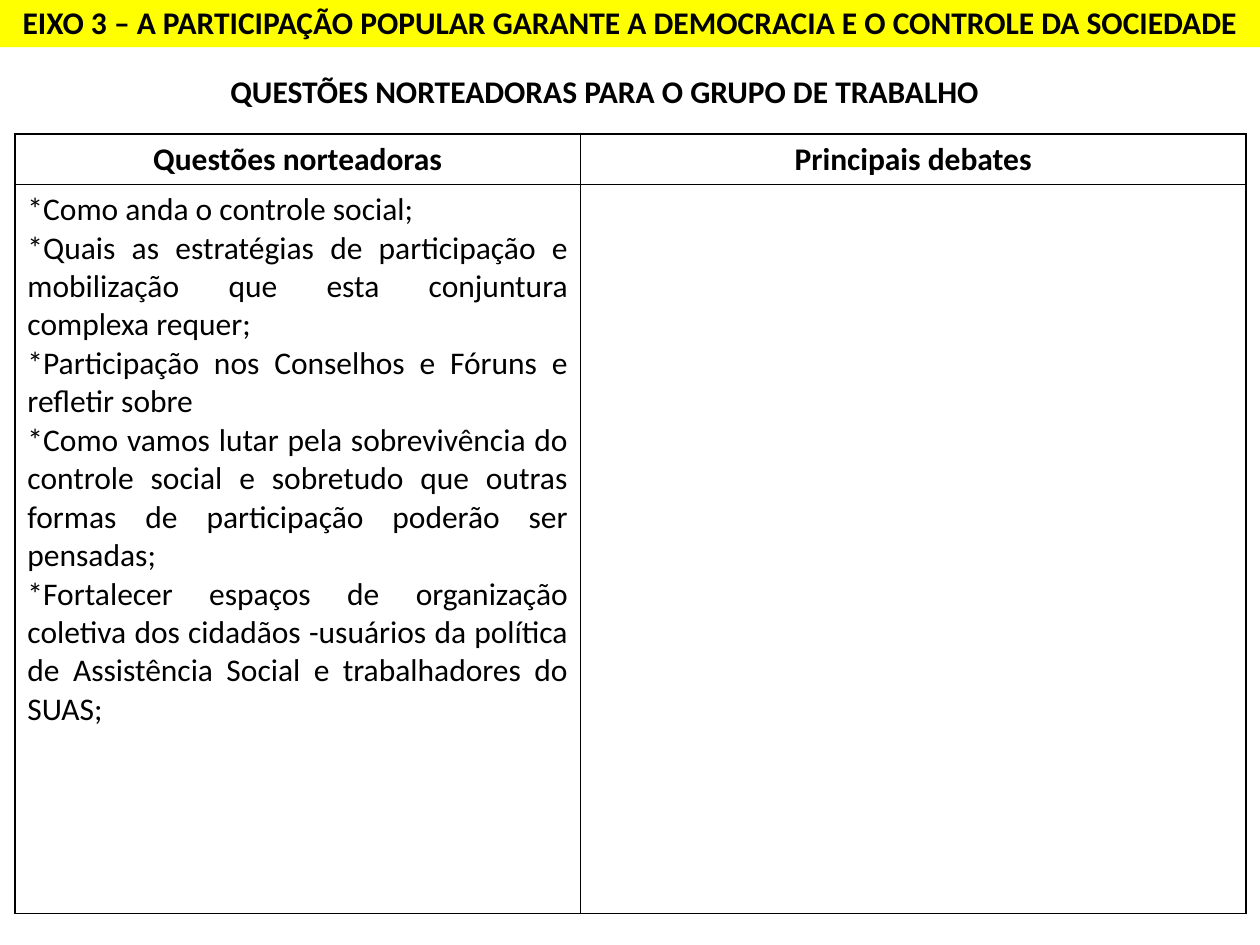
from dataclasses import dataclass

from lxml.etree import SubElement
from pptx import Presentation
from pptx.dml.color import RGBColor
from pptx.enum.text import MSO_ANCHOR, MSO_AUTO_SIZE, PP_ALIGN as ALIGN
from pptx.oxml.ns import qn
from pptx.util import Pt


@dataclass(frozen=True)
class Theme:
    font: str = "Calibri"
    size: int = 18
    ink: str = "000000"
    band: str = "FFFF00"
    border: float = 1


THEME = Theme()

TITLE = "EIXO 3 – A PARTICIPAÇÃO POPULAR GARANTE A DEMOCRACIA E O CONTROLE DA SOCIEDADE"
SUBTITLE = "QUESTÕES NORTEADORAS PARA O GRUPO DE TRABALHO"
HEADERS = ["Questões norteadoras", "Principais debates"]
QUESTIONS = [
    "*Como anda o controle social;",
    "*Quais as estratégias de participação e mobilização que esta conjuntura complexa requer;",
    "*Participação nos Conselhos e Fóruns e refletir sobre",
    "*Como vamos lutar pela sobrevivência do controle social e sobretudo que outras formas "
    "de participação poderão ser pensadas;",
    "*Fortalecer espaços de organização coletiva dos cidadãos -usuários da política de "
    "Assistência Social e trabalhadores do SUAS;",
]


def write(tf, lines, align, bold=False):
    tf.word_wrap = True
    for i, line in enumerate(lines):
        p = tf.add_paragraph() if i else tf.paragraphs[0]
        p.alignment = align
        r = p.add_run()
        r.text = line
        font = {"name": THEME.font, "size": Pt(THEME.size), "bold": bold}
        for name, value in font.items():
            setattr(r.font, name, value)
        r.font.color.rgb = RGBColor.from_string(THEME.ink)


def place(sp, box):
    for name, value in zip(("left", "top", "width", "height"), box):
        setattr(sp, name, Pt(value))


def add_banner(slide, box):
    sp = slide.shapes.title
    place(sp, box)
    sp.fill.solid()
    sp.fill.fore_color.rgb = RGBColor.from_string(THEME.band)
    tf = sp.text_frame
    tf.auto_size = MSO_AUTO_SIZE.NONE
    tf.vertical_anchor = MSO_ANCHOR.TOP
    write(tf, [TITLE], ALIGN.CENTER, bold=True)


def add_subtitle(slide, box):
    sp = slide.shapes.add_textbox(*map(Pt, box))
    write(sp.text_frame, [SUBTITLE], ALIGN.JUSTIFY, bold=True)


def add_borders(cell):
    tc_pr = cell._tc.get_or_add_tcPr()
    for side in ("lnL", "lnR", "lnT", "lnB"):
        ln = SubElement(tc_pr, qn(f"a:{side}"), w=str(Pt(THEME.border)))
        fill = SubElement(ln, qn("a:solidFill"))
        SubElement(fill, qn("a:srgbClr"), val=THEME.ink)


def add_debate_table(slide, box, first_col=323.3, header_height=28.4):
    """Place a header row over one tall row: questions left, room for notes right."""
    width, height = box[2:]
    table = slide.shapes.add_table(2, 2, *map(Pt, box)).table
    table.first_row = table.horz_banding = False
    for col, w in zip(table.columns, (first_col, width - first_col)):
        col.width = Pt(w)
    for row, h in zip(table.rows, (header_height, height - header_height)):
        row.height = Pt(h)
    for cell in table.iter_cells():
        add_borders(cell)
        cell.fill.background()
    for i, header in enumerate(HEADERS):
        write(table.cell(0, i).text_frame, [header], ALIGN.CENTER, bold=True)
    write(table.cell(1, 0).text_frame, QUESTIONS, ALIGN.JUSTIFY)


def main():
    prs = Presentation()
    prs.slide_width, prs.slide_height = Pt(720), Pt(540)
    slide = prs.slides.add_slide(prs.slide_layouts[5])
    add_banner(slide, (0, -2, 720, 29))
    add_subtitle(slide, (124.6, 37.5, 471, 29))
    add_debate_table(slide, (8.5, 76.5, 703.5, 445))
    prs.save("out.pptx")


if __name__ == "__main__":
    main()
